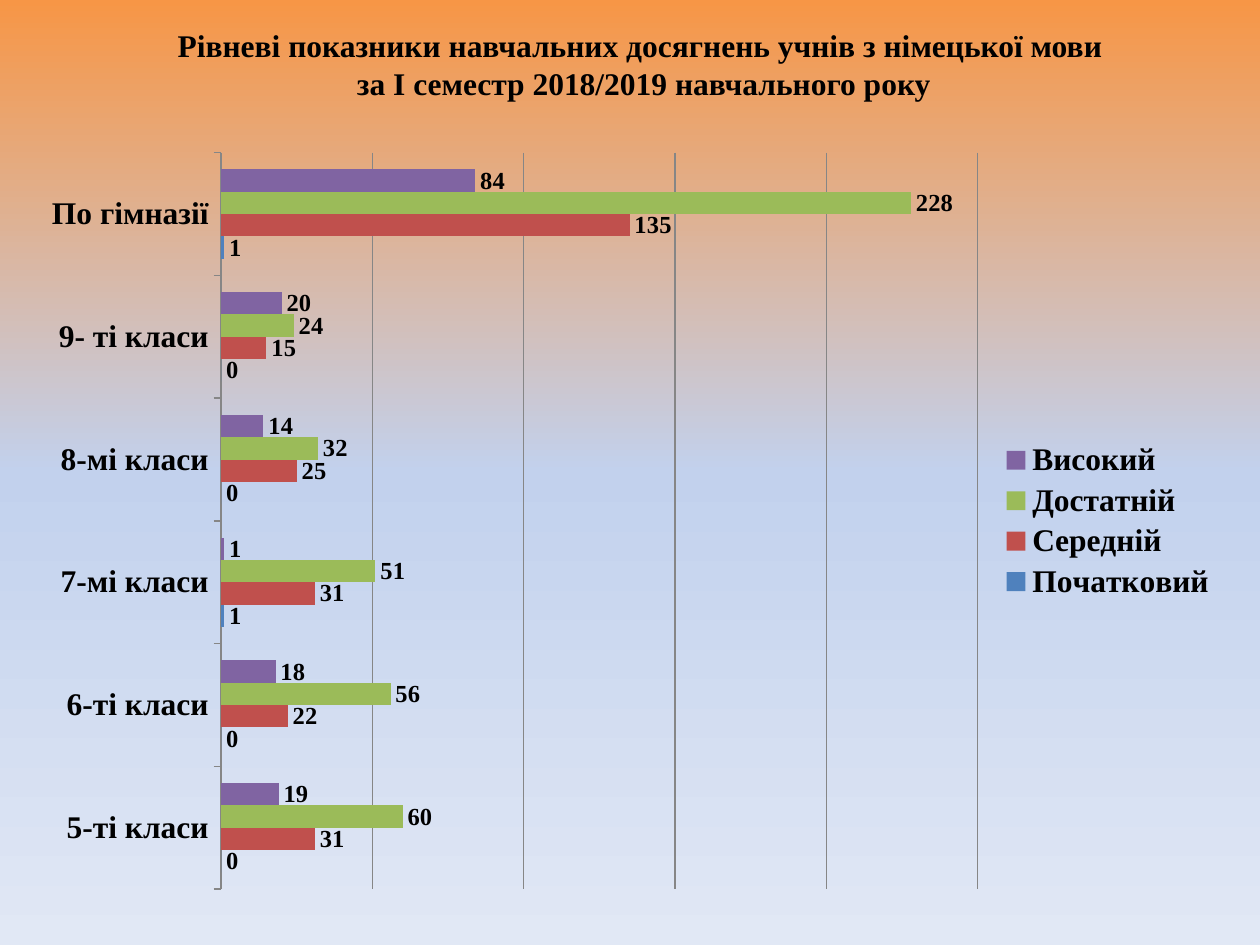
from copy import deepcopy

from pptx import Presentation
from pptx.chart.data import CategoryChartData
from pptx.dml.color import RGBColor
from pptx.enum.chart import XL_CHART_TYPE, XL_LABEL_POSITION, XL_LEGEND_POSITION, XL_TICK_MARK
from pptx.enum.text import MSO_ANCHOR, PP_ALIGN
from pptx.oxml import parse_xml
from pptx.oxml.ns import nsdecls, qn
from pptx.util import Inches, Pt

BAR_CLUSTERED = XL_CHART_TYPE.BAR_CLUSTERED
OUTSIDE_END = XL_LABEL_POSITION.OUTSIDE_END
LEGEND_RIGHT = XL_LEGEND_POSITION.RIGHT
TICK_OUTSIDE = XL_TICK_MARK.OUTSIDE
MIDDLE = MSO_ANCHOR.MIDDLE
CENTER = PP_ALIGN.CENTER

BLACK = RGBColor(0x00, 0x00, 0x00)
GRAY = RGBColor(0x86, 0x86, 0x86)
ORANGE = RGBColor(0xF7, 0x96, 0x46)
SKY = RGBColor(0xC2, 0xD1, 0xED)
PALE = RGBColor(0xE1, 0xE8, 0xF5)
BLUE = RGBColor(0x4F, 0x81, 0xBD)
RED = RGBColor(0xC0, 0x50, 0x4D)
GREEN = RGBColor(0x9B, 0xBB, 0x59)
PURPLE = RGBColor(0x80, 0x64, 0xA2)

HEADING = (
    "Рівневі показники навчальних досягнень учнів з німецької мови\v"
    " за І семестр 2018/2019 навчального року"
)
CLASSES = ["5-ті класи", "6-ті класи", "7-мі класи", "8-мі класи", "9- ті класи", "По гімназії"]
LEVELS = [
    ("Початковий", BLUE, (0, 0, 1, 0, 0, 1)),
    ("Середній", RED, (31, 22, 31, 25, 15, 135)),
    ("Достатній", GREEN, (60, 56, 51, 32, 24, 228)),
    ("Високий", PURPLE, (19, 18, 1, 14, 20, 84)),
]


class SlideBuilder:
    font_name = "Times New Roman"
    text_size = 18
    label_size = 14

    def __init__(self, slide):
        self.slide = slide

    def style(self, font, size):
        font.name = self.font_name
        font.size = Pt(size)
        font.bold = True
        font.color.rgb = BLACK

    def background(self, top, middle, bottom):
        fill = self.slide.background.fill
        fill.gradient()
        fill.gradient_angle = 270
        stop_list = next(self.slide.element.iter(qn("a:gsLst")))
        stop_list.insert(1, deepcopy(stop_list[0]))
        for stop, color, position in zip(fill.gradient_stops, (top, middle, bottom), (0, 0.5, 1)):
            stop.color.rgb = color
            stop.position = position

    def title(self, text, left, top, width, height):
        box = self.slide.shapes.add_textbox(Inches(left), Inches(top), Inches(width), Inches(height))
        frame = box.text_frame
        frame.word_wrap = True
        frame.vertical_anchor = MIDDLE
        frame.text = text
        paragraph = frame.paragraphs[0]
        paragraph.alignment = CENTER
        for run in paragraph.runs:
            self.style(run.font, self.text_size)

    def bar_chart(self, categories, levels, left, top, width, height):
        data = CategoryChartData()
        data.categories = categories
        for name, _, values in levels:
            data.add_series(name, values)
        chart = self.slide.shapes.add_chart(
            BAR_CLUSTERED, Inches(left), Inches(top), Inches(width), Inches(height), data
        ).chart
        chart.has_title = False
        self.style(chart.font, self.text_size)
        plot = chart.plots[0]
        plot.gap_width = 150
        plot.overlap = 0
        plot.vary_by_categories = False
        for series, (_, color, _) in zip(plot.series, levels):
            series.format.fill.solid()
            series.format.fill.fore_color.rgb = color
            series.invert_if_negative = False
            labels = series.data_labels
            labels.show_value = True
            labels.position = OUTSIDE_END
            self.style(labels.font, self.label_size)
        self.axes(chart)
        self.place_plot(chart, x=0.16, y=0.02, w=0.63, h=0.96)
        chart.has_legend = True
        chart.legend.position = LEGEND_RIGHT
        chart.legend.include_in_layout = False
        self.style(chart.legend.font, self.text_size)

    def axes(self, chart):
        classes = chart.category_axis
        classes.major_tick_mark = TICK_OUTSIDE
        classes.format.line.color.rgb = GRAY
        self.style(classes.tick_labels.font, self.text_size)
        pupils = chart.value_axis
        pupils.minimum_scale = 0
        pupils.maximum_scale = 250
        pupils.major_unit = 50
        pupils.has_major_gridlines = True
        pupils.major_gridlines.format.line.color.rgb = GRAY
        pupils.visible = False

    def place_plot(self, chart, **fractions):
        plot_area = next(chart.element.iter(qn("c:plotArea")))
        for layout in plot_area.findall(qn("c:layout")):
            plot_area.remove(layout)
        sizes = "".join(f'<c:{key} val="{value}"/>' for key, value in fractions.items())
        plot_area.insert(0, parse_xml(
            f'<c:layout {nsdecls("c")}><c:manualLayout><c:layoutTarget val="inner"/>'
            f'<c:xMode val="edge"/><c:yMode val="edge"/>{sizes}</c:manualLayout></c:layout>'
        ))


def main():
    presentation = Presentation()
    presentation.slide_width = Inches(10)
    presentation.slide_height = Inches(7.5)
    builder = SlideBuilder(presentation.slides.add_slide(presentation.slide_layouts[6]))
    builder.background(ORANGE, SKY, PALE)
    builder.title(HEADING, 0.47, 0.23, 9.22, 0.55)
    builder.bar_chart(CLASSES, LEVELS, 0.23, 1.09, 9.53, 6.09)
    presentation.save("out.pptx")


if __name__ == "__main__":
    main()
